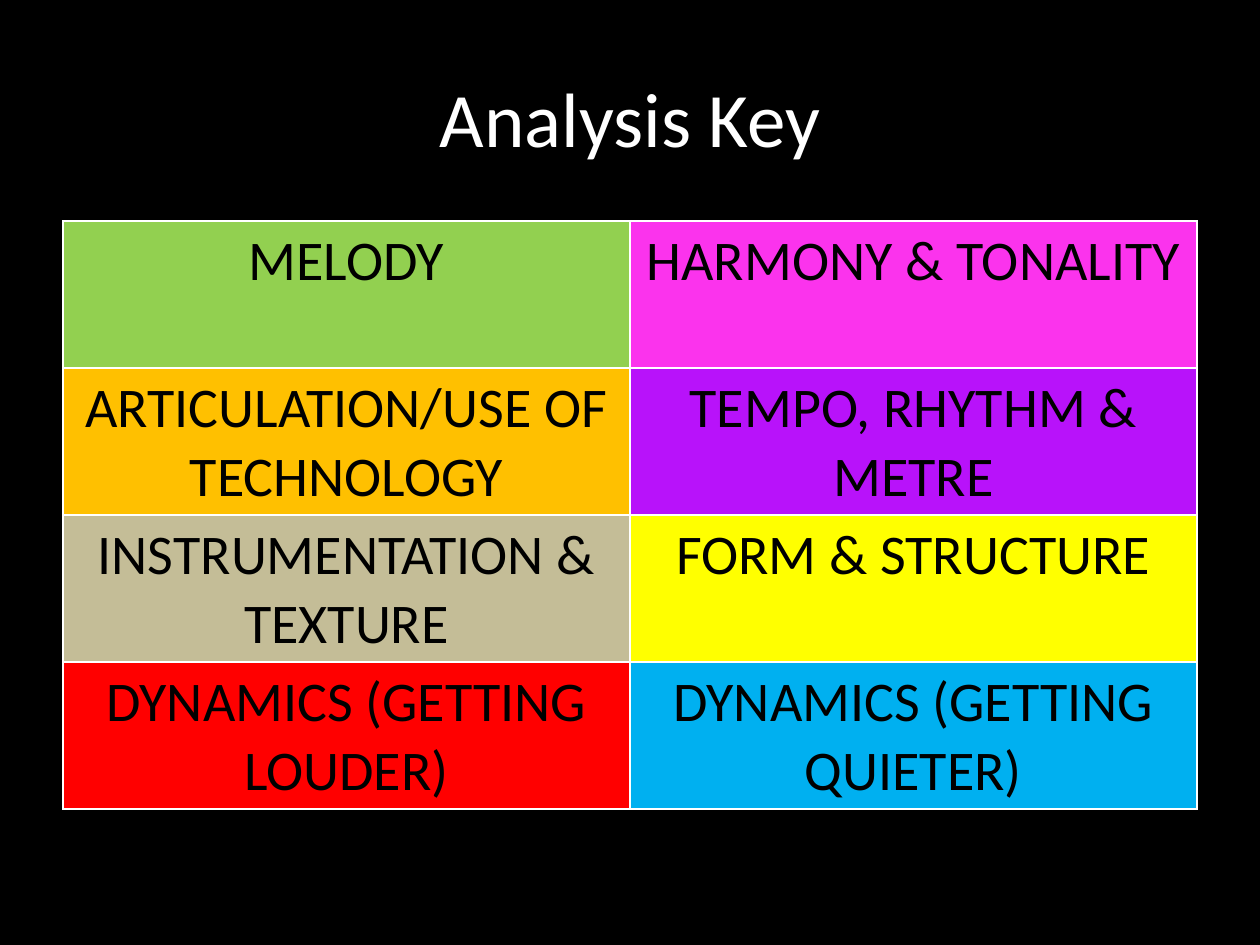
import pptx
import pptx.dml.color
import pptx.enum.text
import pptx.util
from lxml import etree
from pptx.oxml.ns import qn

RGBColor = pptx.dml.color.RGBColor
PX = 914400 / 126
FONT = "Calibri"

BLACK = RGBColor(0x00, 0x00, 0x00)
WHITE = RGBColor(0xFF, 0xFF, 0xFF)
GREEN = RGBColor(0x92, 0xD0, 0x50)
PINK = RGBColor(0xFB, 0x33, 0xED)
ORANGE = RGBColor(0xFF, 0xC0, 0x00)
PURPLE = RGBColor(0xB8, 0x12, 0xFA)
TAN = RGBColor(0xC4, 0xBD, 0x97)
YELLOW = RGBColor(0xFF, 0xFF, 0x00)
RED = RGBColor(0xFF, 0x00, 0x00)
BLUE = RGBColor(0x00, 0xB0, 0xF0)

KEY_ROWS = [
    [("MELODY", GREEN), ("HARMONY & TONALITY", PINK)],
    [("ARTICULATION/USE OF TECHNOLOGY", ORANGE), ("TEMPO, RHYTHM & METRE", PURPLE)],
    [("INSTRUMENTATION & TEXTURE", TAN), ("FORM & STRUCTURE", YELLOW)],
    [("DYNAMICS (GETTING LOUDER)", RED), ("DYNAMICS (GETTING QUIETER)", BLUE)],
]


def emu(px):
    return pptx.util.Emu(round(px * PX))


def write_centred(frame, text, size, color):
    para = frame.paragraphs[0]
    para.text = text
    para.alignment = pptx.enum.text.PP_ALIGN.CENTER
    para.font.name = FONT
    para.font.size = pptx.util.Pt(size)
    para.font.color.rgb = color


def add_borders(cell, color, width):
    """Draw all four cell edges; call before filling the cell, as the schema puts lines first."""
    properties = cell._tc.get_or_add_tcPr()
    for edge in ("a:lnL", "a:lnR", "a:lnT", "a:lnB"):
        line = etree.SubElement(properties, qn(edge), w=str(pptx.util.Pt(width)))
        fill = etree.SubElement(line, qn("a:solidFill"))
        etree.SubElement(fill, qn("a:srgbClr"), val=str(color))


def add_title(page, left, top, width, height):
    box = page.shapes.add_textbox(emu(left), emu(top), emu(width), emu(height))
    box.text_frame.word_wrap = True
    box.text_frame.vertical_anchor = pptx.enum.text.MSO_ANCHOR.MIDDLE
    write_centred(box.text_frame, "Analysis Key", 44, WHITE)


def add_key_table(page, left, top, width, height):
    table = page.shapes.add_table(
        len(KEY_ROWS), len(KEY_ROWS[0]), emu(left), emu(top), emu(width), emu(height)
    ).table
    for row, entries in enumerate(KEY_ROWS):
        for column, (label, color) in enumerate(entries):
            cell = table.cell(row, column)
            add_borders(cell, WHITE, 1)
            cell.fill.solid()
            cell.fill.fore_color.rgb = color
            write_centred(cell.text_frame, label, 32, BLACK)


def main():
    deck = pptx.Presentation()
    deck.slide_width, deck.slide_height = emu(1260), emu(945)
    page = deck.slides.add_slide(deck.slide_layouts[6])
    page.background.fill.solid()
    page.background.fill.fore_color.rgb = BLACK
    add_title(page, 63, 38, 1134, 157)
    add_key_table(page, 63, 221, 1134, 588)
    deck.save("out.pptx")


if __name__ == "__main__":
    main()
